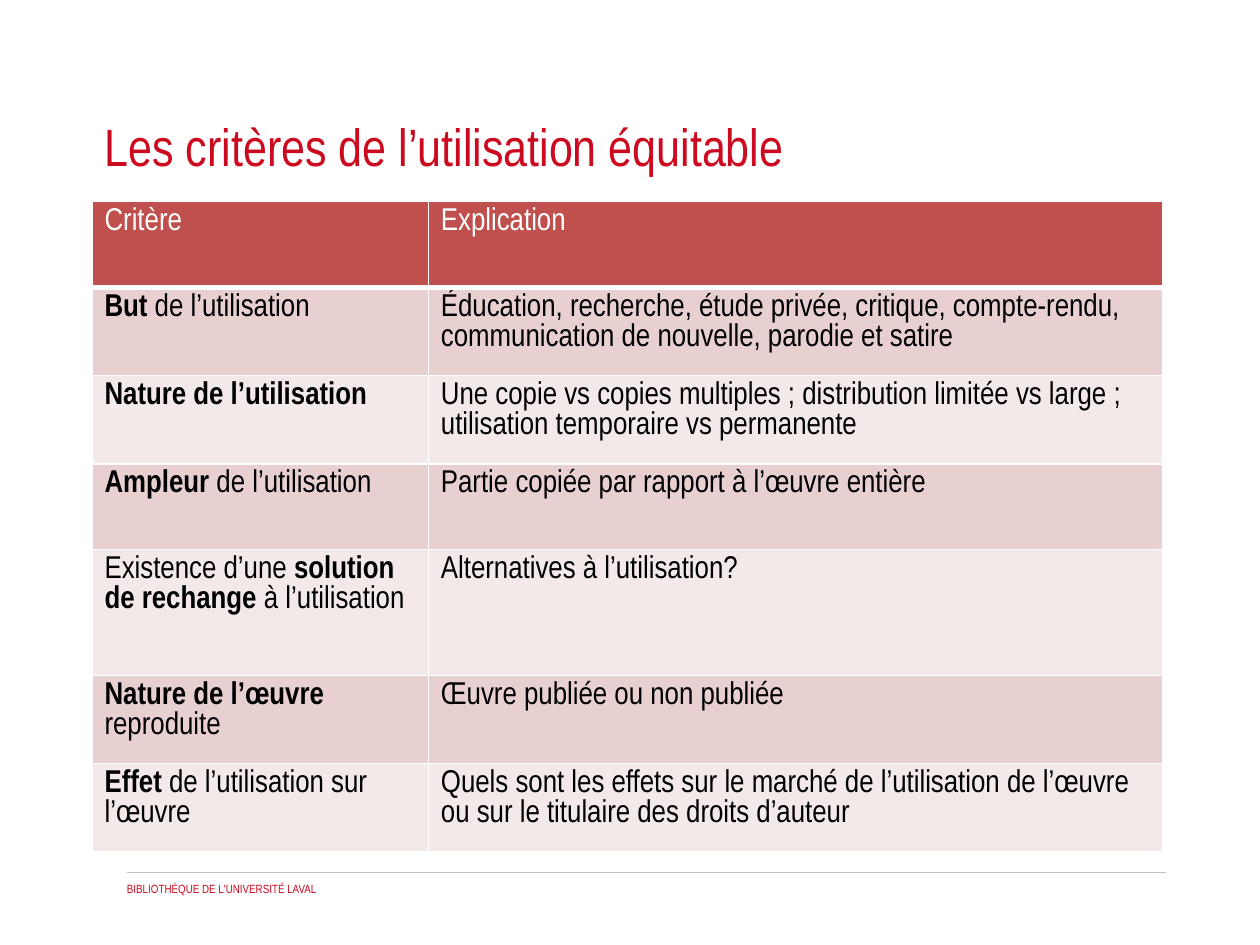
from pptx import Presentation
from pptx.dml.color import RGBColor
from pptx.enum.shapes import MSO_CONNECTOR
from pptx.enum.text import MSO_ANCHOR, PP_ALIGN
from pptx.oxml.ns import qn
from pptx.util import Inches, Pt
from lxml.etree import SubElement

FONT = "Arial Narrow"
RED, WHITE, BLACK, GREY = "CD0920", "FFFFFF", "000000", "BFBFBF"
HEADER_FILL, BANDS = "C0504D", ("E8D0D0", "F4E9E9")

COL_WIDTHS = (2.67, 5.83)
ROW_HEIGHTS = (0.68, 0.7, 0.7, 0.68, 1, 0.7, 0.7)

# Each criterion is a list of (text, bold) runs, followed by its explanation
HEADER = ([("Critère", False)], "Explication")
CRITERIA = [
    ([("But", True), (" de l’utilisation", False)],
     "Éducation, recherche, étude privée, critique, compte-rendu, "
     "communication de nouvelle, parodie et satire"),
    ([("Nature de l’utilisation", True)],
     "Une copie vs copies multiples ; distribution limitée vs large ; "
     "utilisation temporaire vs permanente"),
    ([("Ampleur", True), (" de l’utilisation", False)],
     "Partie copiée par rapport à l’œuvre entière"),
    ([("Existence d’une ", False), ("solution de rechange", True),
      (" à l’utilisation", False)],
     "Alternatives à l’utilisation?"),
    ([("Nature de l’œuvre ", True), ("reproduite", False)],
     "Œuvre publiée ou non publiée"),
    ([("Effet", True), (" de l’utilisation sur l’œuvre", False)],
     "Quels sont les effets sur le marché de l’utilisation de l’œuvre "
     "ou sur le titulaire des droits d’auteur"),
]


def rgb(value):
    return RGBColor.from_string(value)


def add_run(p, text, size, color, bold=False):
    r = p.add_run()
    r.text = text
    r.font.name = FONT
    r.font.size = Pt(size)
    r.font.bold = bold
    r.font.color.rgb = rgb(color)


def set_borders(cell, color, bottom=1):
    """Draw the four cell edges; they must precede the fill in the XML."""
    tcPr = cell._tc.get_or_add_tcPr()
    for side, width in (("L", 1), ("R", 1), ("T", 1), ("B", bottom)):
        ln = SubElement(tcPr, qn(f"a:ln{side}"), w=str(Pt(width)))
        fill = SubElement(ln, qn("a:solidFill"))
        SubElement(fill, qn("a:srgbClr"), val=color)


def place_title(s, left, top, width, height):
    sp = s.shapes.title
    sp.left, sp.top, sp.width, sp.height = map(Inches, (left, top, width, height))
    tf = sp.text_frame
    tf.word_wrap = True
    tf.vertical_anchor = MSO_ANCHOR.MIDDLE
    p = tf.paragraphs[0]
    p.alignment = PP_ALIGN.LEFT
    add_run(p, "Les critères de l’utilisation équitable", 30, RED)


def fill_cell(cell, runs, fill, color, bottom=1):
    set_borders(cell, WHITE, bottom)
    cell.fill.solid()
    cell.fill.fore_color.rgb = rgb(fill)
    for text, bold in runs:
        add_run(cell.text_frame.paragraphs[0], text, 18, color, bold)


def add_criteria_table(s, left, top, width, height):
    rows = [HEADER] + CRITERIA
    table = s.shapes.add_table(len(rows), len(COL_WIDTHS), Inches(left), Inches(top),
                               Inches(width), Inches(height)).table
    for col, w in zip(table.columns, COL_WIDTHS):
        col.width = Inches(w)
    for i, (criterion, explanation) in enumerate(rows):
        table.rows[i].height = Inches(ROW_HEIGHTS[i])
        if i == 0:
            style = (HEADER_FILL, WHITE, 3)
        else:
            style = (BANDS[(i - 1) % 2], BLACK)
        fill_cell(table.cell(i, 0), criterion, *style)
        fill_cell(table.cell(i, 1), [(explanation, False)], *style)


def add_footer(s, left, top, width, height):
    # Library name
    tf = s.shapes.add_textbox(Inches(left), Inches(top),
                              Inches(width), Inches(height)).text_frame
    tf.word_wrap = True
    add_run(tf.paragraphs[0], "BIBLIOTHÈQUE DE L'UNIVERSITÉ LAVAL", 6.8, RED)
    # Rule above it, starting at the text edge
    y = Inches(top - 0.03)
    rule = s.shapes.add_connector(MSO_CONNECTOR.STRAIGHT, Inches(left + 0.1), y,
                                  Inches(9.25), y)
    rule.line.color.rgb = rgb(GREY)
    rule.line.width = Pt(0.25)
    SubElement(rule._element.spPr, qn("a:effectLst"))


def main():
    prs = Presentation()
    prs.slide_width, prs.slide_height = Inches(10), Inches(7.5)
    s = prs.slides.add_slide(prs.slide_layouts[5])
    s.background.fill.solid()
    s.background.fill.fore_color.rgb = rgb(WHITE)
    add_footer(s, 0.91, 6.95, 6.04, 0.21)
    place_title(s, 0.73, 0.8, 8.5, 0.71)
    add_criteria_table(s, 0.73, 1.6, sum(COL_WIDTHS), sum(ROW_HEIGHTS))
    prs.save("out.pptx")


if __name__ == "__main__":
    main()
